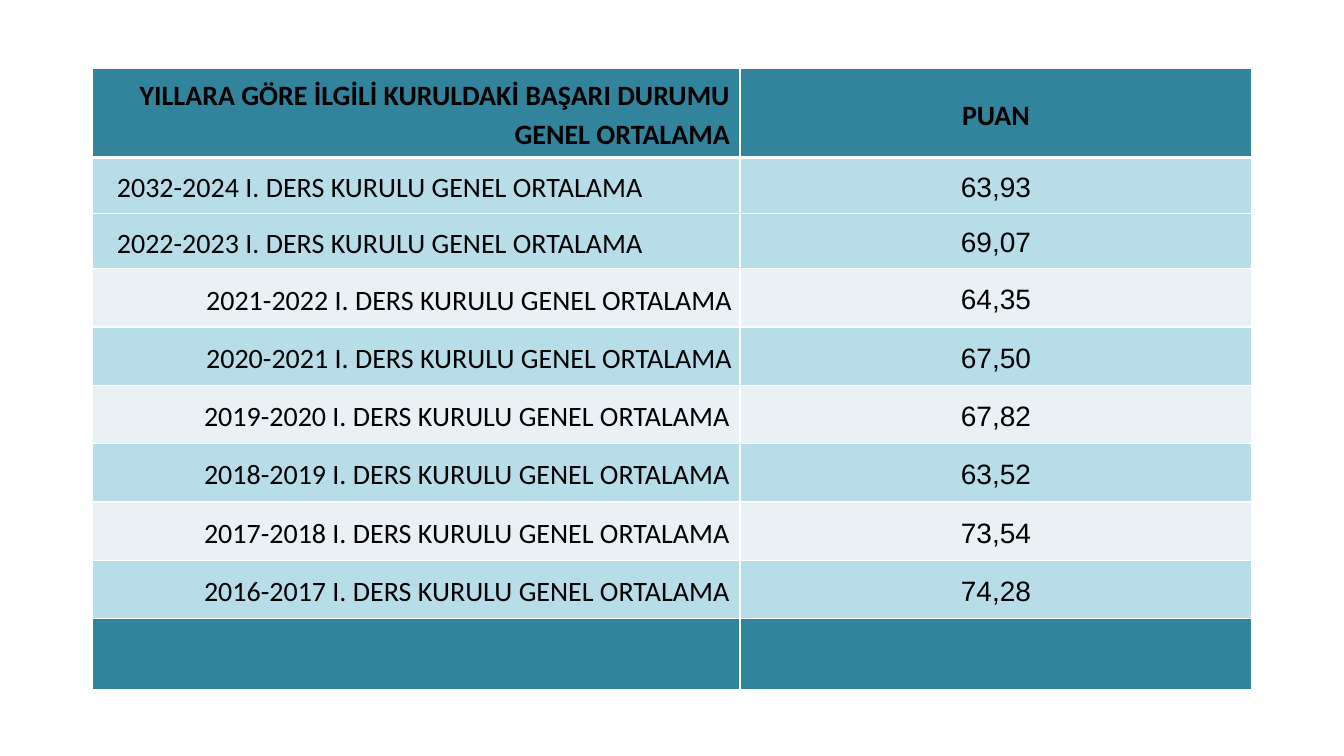
from lxml.etree import SubElement
from pptx import Presentation
from pptx.dml.color import RGBColor
from pptx.enum.text import MSO_ANCHOR, PP_ALIGN
from pptx.oxml.ns import qn
from pptx.util import Cm, Pt

BLACK = RGBColor(0x00, 0x00, 0x00)
WHITE = RGBColor(0xFF, 0xFF, 0xFF)
TEAL = RGBColor(0x31, 0x84, 0x9B)
LIGHT_BLUE = RGBColor(0xB6, 0xDD, 0xE8)
PALE_GREY = RGBColor(0xE9, 0xF1, 0xF5)

HEADER = ("YILLARA GÖRE İLGİLİ KURULDAKİ BAŞARI DURUMU GENEL ORTALAMA", "PUAN")
SCORES = [
    ("2032-2024", "63,93"), ("2022-2023", "69,07"),
    ("2021-2022", "64,35"), ("2020-2021", "67,50"),
    ("2019-2020", "67,82"), ("2018-2019", "63,52"),
    ("2017-2018", "73,54"), ("2016-2017", "74,28"),
]
COL_WIDTHS = (16.31, 12.9)
ROW_HEIGHTS = [1.8] + [1.4] * 2 + [1.47] * 6 + [1.8]
# Right margins of the year labels that differ from the default
RIGHT_MARGINS = {1: 2.45, 2: 2.45, 3: 0.2, 4: 0.2}
ALIGNMENTS = (PP_ALIGN.RIGHT, PP_ALIGN.CENTER)


class SlideBuilder:
    """Holds the text style and the current slide."""

    def __init__(self, slide):
        self.s = slide
        self.style = {"size": Pt(20), "bold": False, "name": "Calibri"}

    def table(self, left, top, widths, heights, frame_height):
        frame = self.s.shapes.add_table(
            len(heights), len(widths), Cm(left), Cm(top),
            Cm(sum(widths)), Cm(sum(heights)))
        tbl = frame.table
        tbl.first_row = tbl.horz_banding = False
        for col, width in zip(tbl.columns, widths):
            col.width = Cm(width)
        for row, height in zip(tbl.rows, heights):
            row.height = Cm(height)
        frame.height = Cm(frame_height)
        return tbl

    def cell(self, cell, fill, top_line=1, bottom_line=1):
        cell.vertical_anchor = MSO_ANCHOR.MIDDLE
        tc_pr = cell._tc.get_or_add_tcPr()
        sides = {"L": 1, "R": 1, "T": top_line, "B": bottom_line}
        for side, width in sides.items():
            ln = SubElement(tc_pr, qn(f"a:ln{side}"), w=str(Pt(width)))
            color = SubElement(SubElement(ln, qn("a:solidFill")), qn("a:srgbClr"))
            color.set("val", str(WHITE))
        cell.fill.solid()
        cell.fill.fore_color.rgb = fill

    def text(self, cell, text, align, **formats):
        p = cell.text_frame.paragraphs[0]
        p.alignment = align
        p.line_spacing = 1.15
        r = p.add_run()
        r.text = text
        for name, value in {**self.style, **formats}.items():
            setattr(r.font, name, value)
        r.font.color.rgb = BLACK

    def margins(self, cell, right):
        values = {"left": 0.08, "top": 0.02, "right": right, "bottom": 0}
        for side, value in values.items():
            setattr(cell, f"margin_{side}", Cm(value))


def main():
    prs = Presentation()
    prs.slide_width, prs.slide_height = Cm(33.87), Cm(19.05)
    builder = SlideBuilder(prs.slides.add_slide(prs.slide_layouts[6]))
    tbl = builder.table(2.34, 1.73, COL_WIDTHS, ROW_HEIGHTS, 15.57)
    last = len(ROW_HEIGHTS) - 1

    # Fills and borders
    for i in range(last + 1):
        if i in (0, last):
            fill = TEAL
        else:
            fill = PALE_GREY if i > 1 and i % 2 else LIGHT_BLUE
        for j in range(len(COL_WIDTHS)):
            builder.cell(tbl.cell(i, j), fill,
                         top_line=3 if i == 1 else 1,
                         bottom_line=3 if i == 0 else 1)

    # Header
    for j, (title, align) in enumerate(zip(HEADER, ALIGNMENTS)):
        builder.text(tbl.cell(0, j), title, align, bold=True)

    # Yearly averages
    for i, (years, score) in enumerate(SCORES, start=1):
        label = tbl.cell(i, 0)
        builder.text(label, f"{years} I. DERS KURULU GENEL ORTALAMA", ALIGNMENTS[0])
        if i in RIGHT_MARGINS:
            builder.margins(label, RIGHT_MARGINS[i])
        builder.text(tbl.cell(i, 1), score, ALIGNMENTS[1], name="Arial")

    prs.save("out.pptx")


if __name__ == "__main__":
    main()
